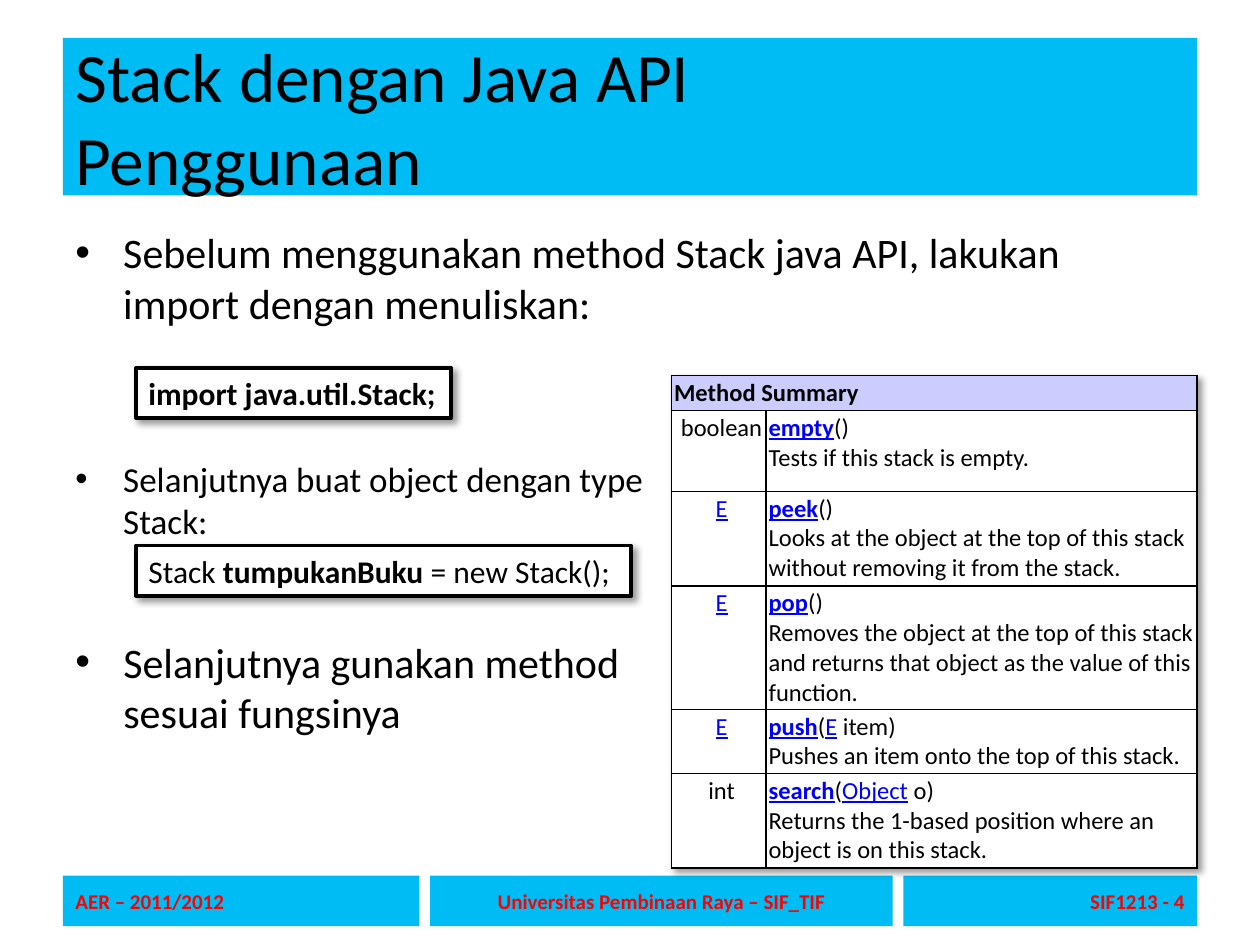
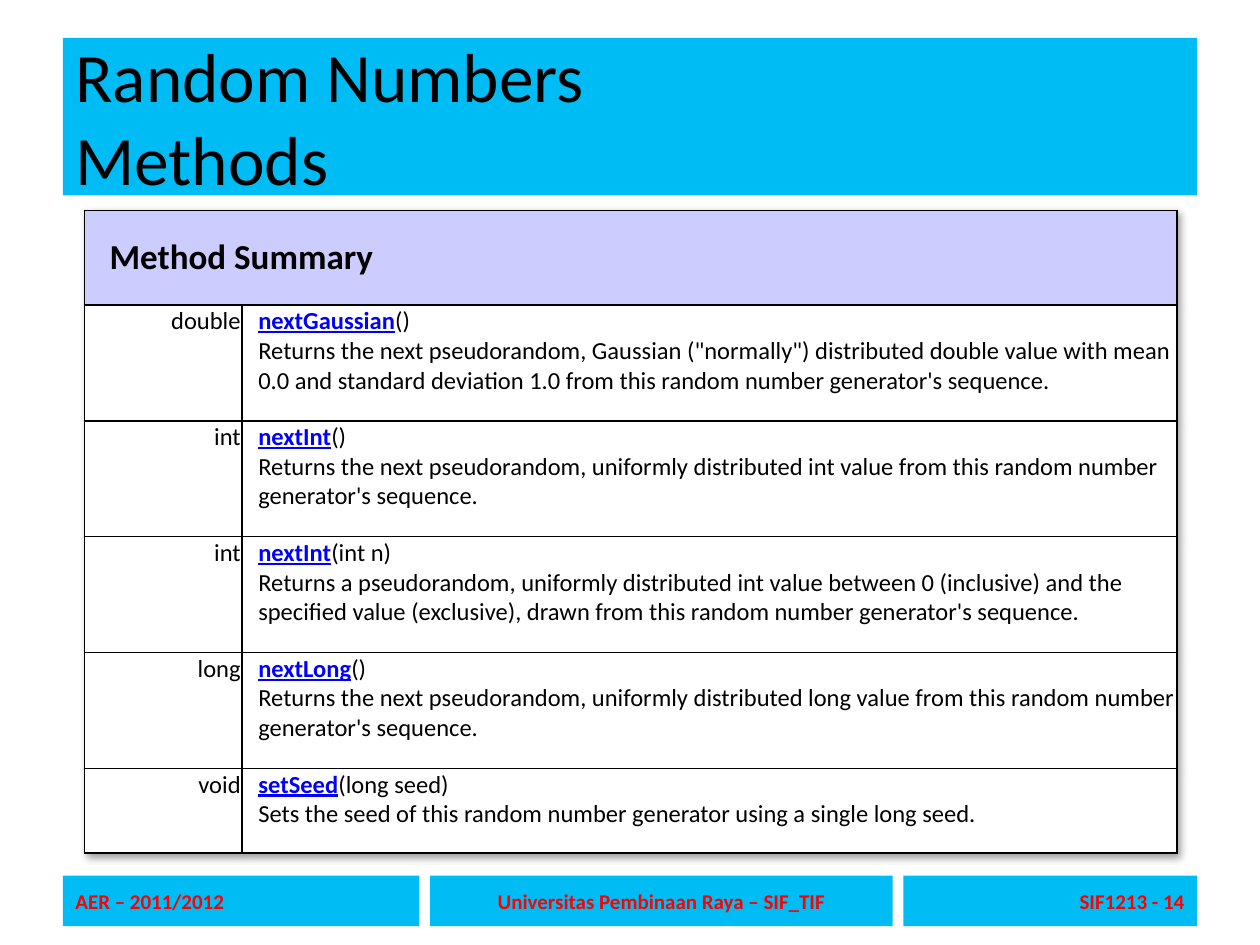
"""Two lecture slides: using the Java Stack class and the Random method summary."""
from lxml import etree
from pptx import Presentation
from pptx.dml.color import RGBColor
from pptx.enum.shapes import MSO_SHAPE
from pptx.enum.text import MSO_ANCHOR, MSO_AUTO_SIZE, PP_ALIGN
from pptx.oxml.ns import qn
from pptx.util import Inches, Pt

LEFT, CENTER, RIGHT = PP_ALIGN.LEFT, PP_ALIGN.CENTER, PP_ALIGN.RIGHT
TOP, MIDDLE = MSO_ANCHOR.TOP, MSO_ANCHOR.MIDDLE
RECT, GROW = MSO_SHAPE.RECTANGLE, MSO_AUTO_SIZE.SHAPE_TO_FIT_TEXT
BAND = RGBColor(0x00, 0xBC, 0xF4)
HEADER = RGBColor(0xCC, 0xCC, 0xFF)
LINK = RGBColor(0x00, 0x00, 0xFF)
RED = RGBColor(0xFF, 0x00, 0x00)
BLACK = RGBColor(0x00, 0x00, 0x00)
WHITE = RGBColor(0xFF, 0xFF, 0xFF)
FONT = "Calibri"
SLIDE_W, SLIDE_H = 10, 7.5
MARGIN, GAP = 0.5, 0.085
FOOTER_TOP, FOOTER_H = 6.95, 0.4

FOOTERS = [
    ("AER – 2011/2012", 2.83, LEFT),
    ("Universitas Pembinaan Raya – SIF_TIF", 3.67, CENTER),
    ("SIF1213 - {}", 2.33, RIGHT),
]
BULLETS = [
    ("Sebelum menggunakan method Stack java API, lakukan import dengan menuliskan:",
     24, (0.5, 1.75, 9, 1.17)),
    ("Selanjutnya buat object dengan type Stack:", 20, (0.5, 3.58, 5, 0.79)),
    ("Selanjutnya gunakan method sesuai fungsinya", 24, (0.5, 5, 4.52, 0.67)),
]
CODE_BOXES = [
    ([("import java.util.Stack;", "b")], (1.08, 2.92, 2.5, 0.4)),
    ([("Stack ", ""), ("tumpukanBuku", "b"), (" = new Stack();", "")],
     (1.08, 4.33, 3.93, 0.4)),
]
ELEMENT = [(" ", ""), ("E", "u")]
STACK_METHODS = [
    (" boolean", [("empty", "bu"), ("()\nTests if this stack is empty.", "")]),
    (ELEMENT, [("peek", "bu"), ("()\nLooks at the object at the top of this stack "
                                "without removing it from the stack.", "")]),
    (ELEMENT, [("pop", "bu"), ("()\nRemoves the object at the top of this stack and "
                               "returns that object as the value of this function.", "")]),
    (ELEMENT, [("push", "bu"), ("(", ""), ("E", "u"),
               (" item)\nPushes an item onto the top of this stack.", "")]),
    (" int", [("search", "bu"), ("(", ""), ("Object", "u"),
              (" o)\nReturns the 1-based position where an object is on this stack.", "")]),
]
RANDOM_METHODS = [
    (" double", [("nextGaussian", "bu"),
                 ("()\nReturns the next pseudorandom, Gaussian (\"normally\") distributed "
                  "double value with mean 0.0 and standard deviation 1.0 from this random "
                  "number generator's sequence.", "")]),
    (" int", [("nextInt", "bu"),
              ("()\nReturns the next pseudorandom, uniformly distributed int value from "
               "this random number generator's sequence.", "")]),
    (" int", [("nextInt", "bu"),
              ("(int n)\nReturns a pseudorandom, uniformly distributed int value between 0 "
               "(inclusive) and the specified value (exclusive), drawn from this random "
               "number generator's sequence.", "")]),
    (" long", [("nextLong", "bu"),
               ("()\nReturns the next pseudorandom, uniformly distributed long value from "
                "this random number generator's sequence.", "")]),
    (" void", [("setSeed", "bu"),
               ("(long seed)\nSets the seed of this random number generator using a single "
                "long seed.", "")]),
]
STACK_TABLE = dict(
    at=(5.33, 2.98), cols=[0.75, 3.42], rows=[0.28, 0.64, 0.75, 0.98, 0.51, 0.75],
    inset=0.02, header_size=14, header_indent=0, indent=0, type_align=CENTER)
RANDOM_TABLE = dict(
    at=(0.67, 1.67), cols=[1.25, 7.42], rows=[0.75] + [0.92] * 4 + [0.67],
    inset=0.01, header_size=20, header_indent=0.19, indent=0.12, type_align=RIGHT)


def inches(box):
    return [Inches(v) for v in box]


def write(p, runs, size, color=BLACK, align=LEFT):
    """Fill a paragraph from (text, style) runs; b is bold, u is a link."""
    if isinstance(runs, str):
        runs = [(runs, "")]
    p.alignment = align
    for text, style in runs:
        for i, line in enumerate(text.split("\n")):
            if i:
                p.add_line_break()
                etree.SubElement(p._p[-1], qn("a:rPr"), sz=str(int(size * 100)))
            r = p.add_run()
            r.text = line
            r.font.name, r.font.size = FONT, Pt(size)
            r.font.bold = "b" in style
            r.font.underline = "u" in style
            r.font.color.rgb = LINK if "u" in style else color


def add_shadow(effects):
    shadow = etree.SubElement(effects, qn("a:outerShdw"), blurRad=str(Pt(4)),
                              dist=str(Pt(3)), dir="2700000", algn="tl", rotWithShape="0")
    color = etree.SubElement(shadow, qn("a:srgbClr"), val=str(BLACK))
    etree.SubElement(color, qn("a:alpha"), val="40000")


def add_band(s, box, runs, size, color=BLACK, align=LEFT):
    sp = s.shapes.add_shape(RECT, *inches(box))
    sp.shadow.inherit = False
    sp.fill.solid()
    sp.fill.fore_color.rgb = BAND
    sp.line.fill.background()
    sp.text_frame.word_wrap = True
    sp.text_frame.vertical_anchor = MIDDLE
    write(sp.text_frame.paragraphs[0], runs, size, color, align)


def add_bullet(s, text, size, box):
    tf = s.shapes.add_textbox(*inches(box)).text_frame
    tf.word_wrap = True
    p = tf.paragraphs[0]
    write(p, text, size)
    p.space_before = Pt(size * 0.2)
    pPr = p._p.get_or_add_pPr()
    pPr.set("marL", str(Inches(0.38)))
    pPr.set("indent", str(-Inches(0.38)))
    etree.SubElement(pPr, qn("a:buFont"), typeface="Arial")
    etree.SubElement(pPr, qn("a:buChar"), char="•")


def add_code_box(s, runs, box):
    sp = s.shapes.add_textbox(*inches(box))
    sp.fill.solid()
    sp.fill.fore_color.rgb = WHITE
    sp.line.color.rgb = BLACK
    sp.line.width = Pt(2)
    add_shadow(etree.SubElement(sp._element.spPr, qn("a:effectLst")))
    sp.text_frame.word_wrap = False
    sp.text_frame.auto_size = GROW
    write(sp.text_frame.paragraphs[0], runs, 18)


def style_cell(cell, fill, inset, anchor):
    tcPr = cell._tc.get_or_add_tcPr()
    for side in ("a:lnL", "a:lnR", "a:lnT", "a:lnB"):
        ln = etree.SubElement(tcPr, qn(side), w=str(Pt(1)))
        line_fill = etree.SubElement(ln, qn("a:solidFill"))
        etree.SubElement(line_fill, qn("a:srgbClr"), val=str(BLACK))
    cell.fill.solid()
    cell.fill.fore_color.rgb = fill
    cell.margin_left = cell.margin_right = Inches(inset)
    cell.margin_top = cell.margin_bottom = Inches(inset)
    cell.vertical_anchor = anchor


def add_method_table(s, methods, at, cols, rows, inset, header_size,
                     header_indent, indent, type_align):
    box = inches((*at, sum(cols), sum(rows)))
    table = s.shapes.add_table(len(rows), len(cols), *box).table
    table.first_row = table.horz_banding = False
    effects = etree.Element(qn("a:effectLst"))
    table._tbl.tblPr.insert(0, effects)
    add_shadow(effects)
    for col, width in zip(table.columns, cols):
        col.width = Inches(width)
    for row, height in zip(table.rows, rows):
        row.height = Inches(height)
    for i in range(len(rows)):
        for cell in table.rows[i].cells:
            style_cell(cell, WHITE if i else HEADER, inset, TOP if i else MIDDLE)
    header = table.cell(0, 0)
    header.merge(table.cell(0, 1))
    p = header.text_frame.paragraphs[0]
    write(p, [("Method Summary", "b")], header_size)
    p._p.get_or_add_pPr().set("marL", str(Inches(header_indent)))
    for i, (kind, method) in enumerate(methods, 1):
        write(table.cell(i, 0).text_frame.paragraphs[0], kind, 14, align=type_align)
        p = table.cell(i, 1).text_frame.paragraphs[0]
        write(p, method, 14)
        p._p.get_or_add_pPr().set("marL", str(Inches(indent)))


def add_slide(prs, title, number):
    s = prs.slides.add_slide(prs.slide_layouts[6])
    add_band(s, (MARGIN, 0.3, SLIDE_W - 2 * MARGIN, 1.25), title, 39.6)
    x = MARGIN
    for text, width, align in FOOTERS:
        add_band(s, (x, FOOTER_TOP, width, FOOTER_H),
                 [(text.format(number), "b")], 12, RED, align)
        x += width + GAP
    return s


def main():
    prs = Presentation()
    prs.slide_width, prs.slide_height = Inches(SLIDE_W), Inches(SLIDE_H)
    s = add_slide(prs, "Stack dengan Java API\nPenggunaan", 4)
    for bullet in BULLETS:
        add_bullet(s, *bullet)
    for code_box in CODE_BOXES:
        add_code_box(s, *code_box)
    add_method_table(s, STACK_METHODS, **STACK_TABLE)
    s = add_slide(prs, "Random Numbers\nMethods", 14)
    add_method_table(s, RANDOM_METHODS, **RANDOM_TABLE)
    prs.save("out.pptx")


if __name__ == "__main__":
    main()
